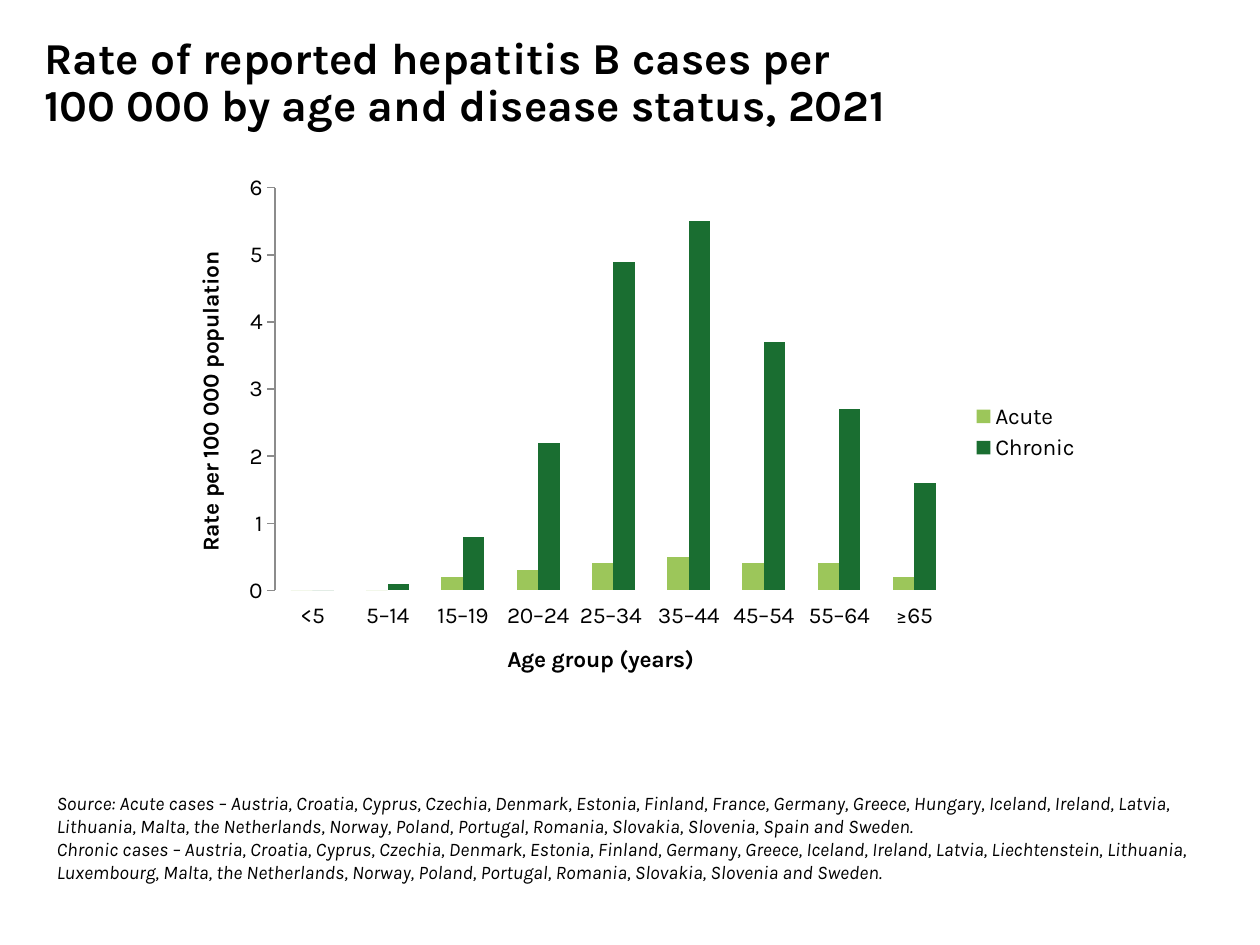
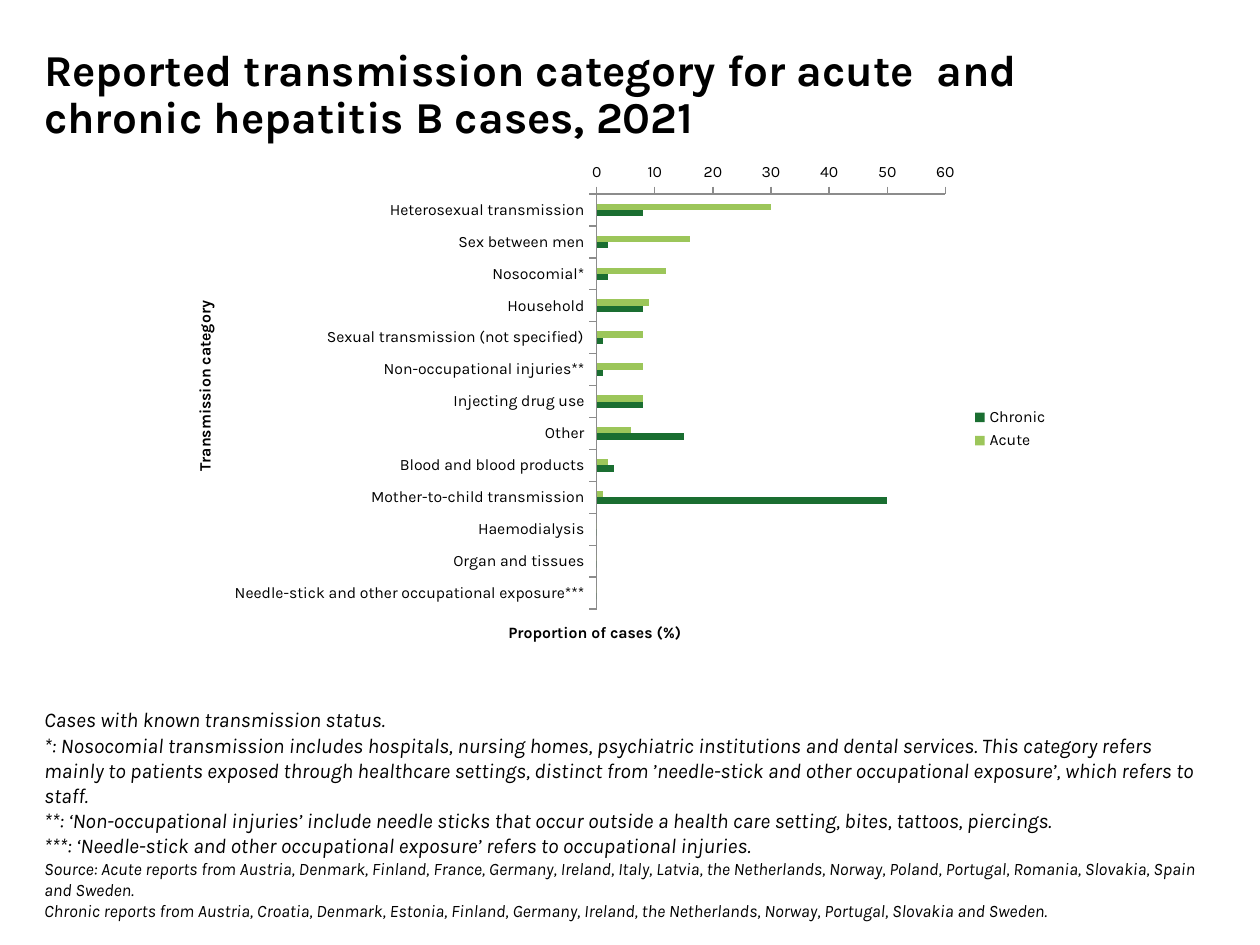
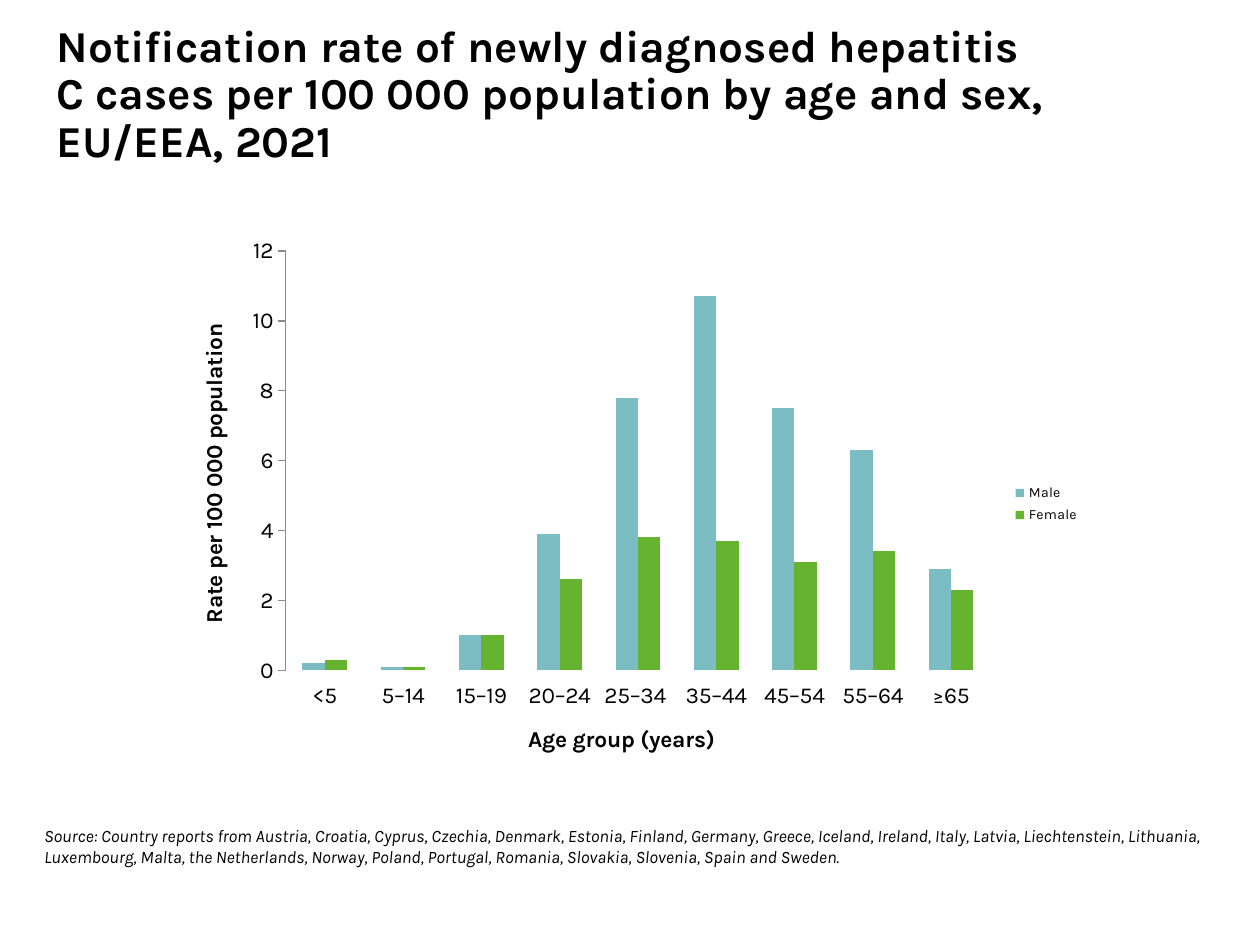
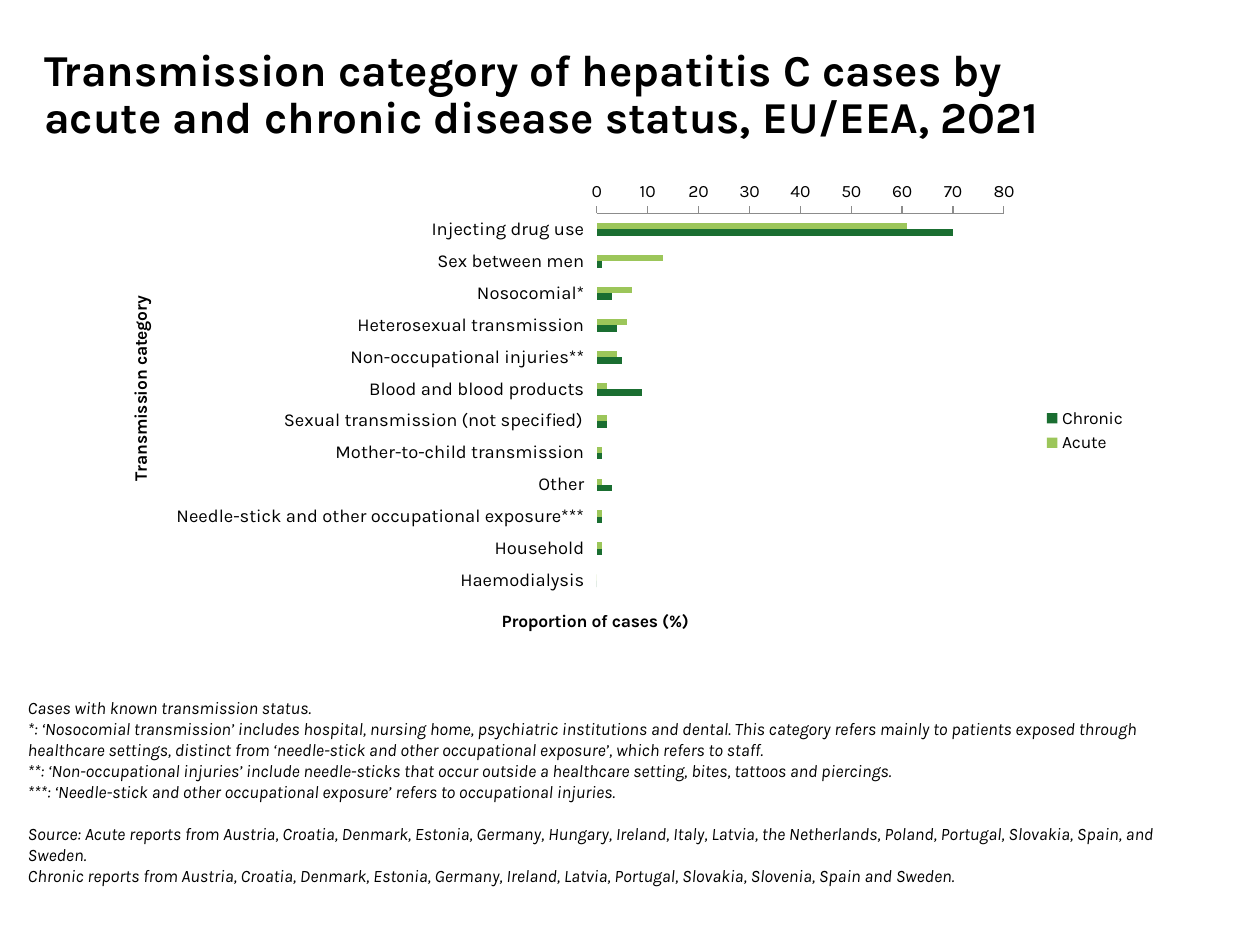
from pptx import Presentation
from pptx.chart.data import CategoryChartData as Data
from pptx.dml.color import RGBColor
from pptx.enum.chart import XL_AXIS_CROSSES as Cross
from pptx.enum.chart import XL_CHART_TYPE as Kind
from pptx.enum.chart import XL_LEGEND_POSITION as Place
from pptx.enum.chart import XL_TICK_MARK as Tick
from pptx.enum.text import MSO_ANCHOR as Anchor
from pptx.enum.text import MSO_AUTO_SIZE as Fit
from pptx.oxml import parse_xml
from pptx.oxml.ns import nsdecls
from pptx.util import Cm, Pt


def hue(code):
    return RGBColor.from_string(code)


def style(font, size, **extra):
    look = {"name": "Karla", "size": Pt(size), "bold": False, **extra}
    for key, value in look.items():
        setattr(font, key, value)
    font.color.rgb = hue(BLACK)


# Shared colours, places and labels
BLACK, GREY = "000000", "8C8C8C"
LIME, GREEN, TEAL, LEAF = "9CC65A", "1A6E31", "7CBDC4", "65B32E"
TITLE = (0.89, 0.61, 20.47, 2.64)
AGES = ["<5", "5–14", "15–19", "20–24", "25–34 ", "35–44", "45–54", "55–64", "≥65"]
AGE, RATE = "Age group (years)", "Rate per 100 000 population"
ROUTE, SHARE = "Transmission category", "Proportion of cases (%)"
INNER = (0.466, 0.059, 0.401, 0.779)

# Content of each slide; a note is (text, size, space before)
slides = [
    {
        "title": "Rate of reported hepatitis B cases per\v100 000 by age and disease status, 2021",
        "place": (0.89, 0.89, 20.96, 2.64), "inset": (0, 0, 0, 1.04),
        "notes": [
            ("Source: Acute cases – Austria, Croatia, Cyprus, Czechia, Denmark, Estonia, Finland, France, Germany, Greece, Hungary, Iceland, Ireland, Latvia, Lithuania, Malta, the Netherlands, Norway, Poland, Portugal, Romania, Slovakia, Slovenia, Spain and Sweden.", 11, 0),
            ("Chronic cases – Austria, Croatia, Cyprus, Czechia, Denmark, Estonia, Finland, Germany, Greece, Iceland, Ireland, Latvia, Liechtenstein, Lithuania, Luxembourg, Malta, the Netherlands, Norway, Poland, Portugal, Romania, Slovakia, Slovenia and Sweden.", 11, 0),
        ],
        "foot": (1.14, 15.95, 23.39, 2.95),
        "area": (3.4, 3.3, 18.62, 10.82), "plot": (0.115, 0.045, 0.733, 0.75),
        "kind": Kind.COLUMN_CLUSTERED, "names": (AGE, RATE), "line": False,
        "sizes": (13, 13, 13), "top": 6, "step": 1, "cats": AGES,
        "rows": [
            ("Acute", LIME, [0, 0, 0.2, 0.3, 0.4, 0.5, 0.4, 0.4, 0.2]),
            ("Chronic", GREEN, [0, 0.1, 0.8, 2.2, 4.9, 5.5, 3.7, 2.7, 1.6]),
        ],
    },
    {
        "title": "Reported transmission category for acute  and chronic hepatitis B cases, 2021",
        "place": TITLE, "inset": (0, 0, 0, 0),
        "notes": [
            ("Cases with known transmission status.", 12, 0),
            ("*: Nosocomial transmission includes hospitals, nursing homes, psychiatric institutions and dental services. This category refers mainly to patients exposed through healthcare settings, distinct from ’needle-stick and other occupational exposure’, which refers to staff.", 12, 0),
            ("**: ‘Non-occupational injuries’ include needle sticks that occur outside a health care setting, bites, tattoos, piercings.", 12, 0),
            ("***: ‘Needle-stick and other occupational exposure’ refers to occupational injuries.", 12, 0),
            ("Source: Acute reports from Austria, Denmark, Finland, France, Germany, Ireland, Italy, Latvia, the Netherlands, Norway, Poland, Portugal, Romania, Slovakia, Spain and Sweden.", 10, 0),
            ("Chronic reports from Austria, Croatia, Denmark, Estonia, Finland, Germany, Ireland, the Netherlands, Norway, Portugal, Slovakia and Sweden.", 10, 0),
        ],
        "foot": (0.89, 14.25, 23.5, 4.37),
        "area": (3.86, 3.28, 17.53, 10.74), "plot": INNER,
        "kind": Kind.BAR_CLUSTERED, "names": (ROUTE, SHARE), "line": True,
        "sizes": (9, 9, 9), "top": 60, "step": 10,
        "cats": [
            "Heterosexual transmission", "Sex between men", "Nosocomial*", "Household",
            "Sexual transmission (not specified)", "Non-occupational injuries**",
            "Injecting drug use", "Other", "Blood and blood products",
            "Mother-to-child transmission", "Haemodialysis", "Organ and tissues",
            "Needle-stick and other occupational exposure***",
        ],
        "rows": [
            ("Acute", LIME, [30, 16, 12, 9, 8, 8, 8, 6, 2, 1, 0, 0, 0]),
            ("Chronic", GREEN, [8, 2, 2, 8, 1, 1, 8, 15, 3, 50, 0, 0, 0]),
        ],
    },
    {
        "title": "Notification rate of newly diagnosed hepatitis C cases per 100 000 population by age and sex, EU/EEA, 2021",
        "place": TITLE, "inset": (0.25, 0.13, 0.25, 0.13),
        "notes": [
            ("Source: Country reports from Austria, Croatia, Cyprus, Czechia, Denmark, Estonia, Finland, Germany, Greece, Iceland, Ireland, Italy, Latvia, Liechtenstein, Lithuania, Luxembourg, Malta, the Netherlands, Norway, Poland, Portugal, Romania, Slovakia, Slovenia, Spain and Sweden.", 10, 0),
        ],
        "foot": (0.89, 16.64, 23.39, 0.86),
        "area": (3.48, 4.57, 18.54, 11.18), "plot": (0.123, 0.044, 0.766, 0.756),
        "kind": Kind.COLUMN_CLUSTERED, "names": (AGE, RATE), "line": False,
        "sizes": (13, 13, 8), "top": 12, "step": 2, "cats": AGES,
        "rows": [
            ("Male", TEAL, [0.2, 0.1, 1, 3.9, 7.8, 10.7, 7.5, 6.3, 2.9]),
            ("Female", LEAF, [0.3, 0.1, 1, 2.6, 3.8, 3.7, 3.1, 3.4, 2.3]),
        ],
    },
    {
        "title": "Transmission category of hepatitis C cases by acute and chronic disease status, EU/EEA, 2021",
        "place": TITLE, "inset": (0, 0, 0, 0),
        "notes": [
            ("Cases with known transmission status.", 10, 0),
            ("*: ‘Nosocomial transmission’ includes hospital, nursing home, psychiatric institutions and dental. This category refers mainly to patients exposed through healthcare settings, distinct from ‘needle-stick and other occupational exposure’, which refers to staff.", 10, 0),
            ("**: ‘Non-occupational injuries’ include needle-sticks that occur outside a healthcare setting, bites, tattoos and piercings.", 10, 0),
            ("***: ‘Needle-stick and other occupational exposure’ refers to occupational injuries.", 10, 0),
            ("Source: Acute reports from Austria, Croatia, Denmark, Estonia, Germany, Hungary, Ireland, Italy, Latvia, the Netherlands, Poland, Portugal, Slovakia, Spain, and Sweden.", 10, 12),
            ("Chronic reports from Austria, Croatia, Denmark, Estonia, Germany, Ireland, Latvia, Portugal, Slovakia, Slovenia, Spain and Sweden.", 10, 0),
        ],
        "foot": (0.56, 14.05, 23.44, 4.37),
        "area": (2.49, 3.66, 20.47, 9.98), "plot": INNER,
        "kind": Kind.BAR_CLUSTERED, "names": (ROUTE, SHARE), "line": False,
        "sizes": (10.5, 10, 10), "top": 80, "step": 10,
        "cats": [
            "Injecting drug use", "Sex between men", "Nosocomial*",
            "Heterosexual transmission", "Non-occupational injuries**",
            "Blood and blood products", "Sexual transmission (not specified)",
            "Mother-to-child transmission", "Other",
            "Needle-stick and other occupational exposure***", "Household", "Haemodialysis",
        ],
        "rows": [
            ("Acute", LIME, [61, 13, 7, 6, 4, 2, 2, 1, 1, 1, 1, 0]),
            ("Chronic", GREEN, [70, 1, 3, 4, 5, 9, 2, 1, 3, 1, 1, 0]),
        ],
    },
]

deck = Presentation()
deck.slide_width, deck.slide_height = Cm(25.4), Cm(19.05)

for part in slides:
    slide = deck.slides.add_slide(deck.slide_layouts[6])

    # Title
    frame = slide.shapes.add_textbox(*map(Cm, part["place"])).text_frame
    frame.word_wrap = True
    frame.vertical_anchor = Anchor.MIDDLE
    for side, gap in zip(("left", "top", "right", "bottom"), part["inset"]):
        setattr(frame, f"margin_{side}", Cm(gap))
    frame.text = part["title"]
    para = frame.paragraphs[0]
    para.line_spacing = 0.9
    for run in para.runs:
        style(run.font, 25.2, bold=True)

    # Notes and sources
    frame = slide.shapes.add_textbox(*map(Cm, part["foot"])).text_frame
    frame.word_wrap = True
    frame.auto_size = Fit.SHAPE_TO_FIT_TEXT
    for side in ("left", "top", "right", "bottom"):
        setattr(frame, f"margin_{side}", 0)
    for num, (text, size, space) in enumerate(part["notes"]):
        para = frame.add_paragraph() if num else frame.paragraphs[0]
        if space:
            para.space_before = Pt(space)
        run = para.add_run()
        run.text = text
        style(run.font, size, italic=True)

    # Chart and its bars
    data = Data(number_format="General")
    data.categories = part["cats"]
    for name, _, vals in part["rows"]:
        data.add_series(name, vals)
    chart = slide.shapes.add_chart(part["kind"], *map(Cm, part["area"]), data).chart
    bars = part["kind"] == Kind.BAR_CLUSTERED
    catsize, valsize, keysize = part["sizes"]
    style(chart.font, valsize)
    chart.has_title = False
    chart.has_legend = True
    chart.legend.position = Place.RIGHT
    chart.legend.include_in_layout = False
    style(chart.legend.font, keysize)
    plot = chart.plots[0]
    plot.gap_width = 300 if bars else 150
    plot.vary_by_categories = False
    for series, (_, color, _) in zip(plot.series, part["rows"]):
        series.format.fill.solid()
        series.format.fill.fore_color.rgb = hue(color)
        series.invert_if_negative = False

    # Axes
    cat, val = chart.category_axis, chart.value_axis
    for axis, name, size in zip((cat, val), part["names"], (catsize, valsize)):
        axis.has_major_gridlines = False
        axis.major_tick_mark = Tick.OUTSIDE
        axis.minor_tick_mark = Tick.NONE
        axis.format.line.width = Pt(0.75)
        axis.format.line.color.rgb = hue(GREY)
        style(axis.tick_labels.font, size)
        run = axis.axis_title.text_frame.paragraphs[0].add_run()
        run.text = name
        style(run.font, valsize, bold=True)
    if not part["line"]:
        cat.format.line.fill.background()
    if bars:
        cat.reverse_order = True
        cat.crosses = Cross.MAXIMUM
    val.minimum_scale, val.maximum_scale = 0, part["top"]
    val.major_unit = part["step"]
    val.tick_labels.number_format = "0"
    val.tick_labels.number_format_is_linked = False

    # Place of the plot inside the chart
    inner = "".join(f'<c:{key} val="{num}"/>' for key, num in zip("xywh", part["plot"]))
    area = chart._chartSpace.chart.plotArea
    for old in area.findall("{*}layout"):
        area.remove(old)
    area.insert(0, parse_xml(
        f'<c:layout {nsdecls("c")}><c:manualLayout><c:layoutTarget val="inner"/>'
        f'<c:xMode val="edge"/><c:yMode val="edge"/>{inner}</c:manualLayout></c:layout>'))

deck.save("out.pptx")
